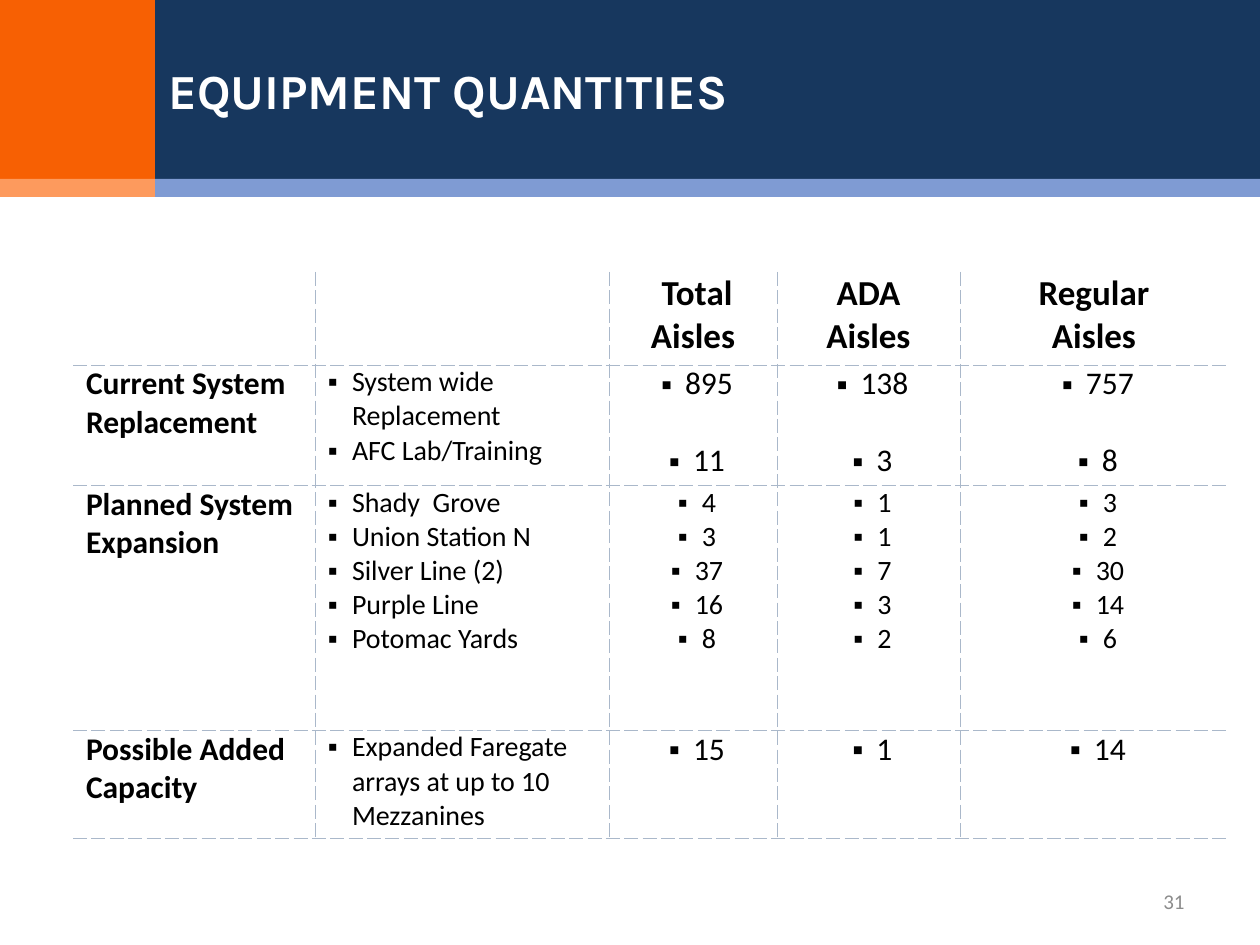
from lxml.etree import SubElement
from pptx import Presentation
from pptx.dml.color import RGBColor
from pptx.enum.shapes import MSO_SHAPE
from pptx.enum.text import MSO_ANCHOR, MSO_AUTO_SIZE, PP_ALIGN
from pptx.oxml import parse_xml
from pptx.oxml.ns import nsdecls, qn
from pptx.util import Emu, Pt

TITLE = "EQUIPMENT QUANTITIES"
PAGE_NUMBER = "31"
BANDS = [
    (155, 0, 1105, 180, "17375E"),
    (0, 0, 155, 180, "F76003"),
    (155, 179, 1105, 18, "7F9BD3"),
    (0, 179, 155, 18, "FD9A5D"),
]
HEADERS = [[], [], ["Total Aisles "], ["ADA ", "Aisles "], ["Regular ", "Aisles "]]
GROUPS = [
    ("Current System Replacement", 18, 22,
     [["System wide Replacement", "AFC Lab/Training"],
      ["895", "11"], ["138", "3"], ["757", "8"]]),
    ("Planned System Expansion", 16, 0,
     [["Shady  Grove", "Union Station N", "Silver Line (2)", "Purple Line", "Potomac Yards"],
      ["4", "3", "37", "16", "8"], ["1", "1", "7", "3", "2"], ["3", "2", "30", "14", "6"]]),
    ("Possible Added Capacity", 18, 0,
     [["Expanded Faregate arrays at up to 10 Mezzanines"], ["15"], ["1"], ["14"]]),
]
COLUMN_WIDTHS = [242, 294, 168, 183, 268]
ROW_HEIGHTS = [93, 120, 245, 107]
TABLE_LEFT, TABLE_TOP = 73, 272
RULE_COLOR = "AAB8CA"


def px(n):
    return Emu(round(n * 914400 / 126))


def color(code):
    return RGBColor.from_string(code)


def style(paragraph, size, code, bold=False, align=PP_ALIGN.LEFT, face="Calibri"):
    paragraph.alignment = align
    font = paragraph.font
    font.name, font.size, font.bold = face, Pt(size), bold
    font.color.rgb = color(code)


def add_bullet(paragraph):
    properties = paragraph._p.get_or_add_pPr()
    properties.set("marL", str(px(24)))
    properties.set("indent", str(-px(24)))
    SubElement(properties, qn("a:buFont")).set("typeface", "Wingdings")
    properties[-1].set("typeface", "Arial")
    SubElement(properties, qn("a:buChar")).set("char", "▪")


def write_cell(cell, lines, size, bold=False, align=PP_ALIGN.LEFT, bullets=False, gap=0):
    cell.margin_left, cell.margin_right = px(13), px(5)
    cell.margin_top, cell.margin_bottom = 0, px(5)
    cell.vertical_anchor = MSO_ANCHOR.TOP
    frame = cell.text_frame
    for i, line in enumerate(lines):
        paragraph = frame.add_paragraph() if i else frame.paragraphs[0]
        paragraph.text = line
        if i and gap:
            paragraph.space_before = Pt(gap)
        if bullets:
            add_bullet(paragraph)
        style(paragraph, size, "000000", bold, align)


def draw_rules(cell, sides):
    cell.fill.background()
    properties = cell._tc.get_or_add_tcPr()
    for i, (side, ruled) in enumerate(sides.items()):
        paint = (f'<a:solidFill><a:srgbClr val="{RULE_COLOR}"/></a:solidFill>'
                 '<a:prstDash val="dash"/>' if ruled else "<a:noFill/>")
        properties.insert(i, parse_xml(
            f'<a:ln{side} {nsdecls("a")} w="{Pt(0.5)}">{paint}</a:ln{side}>'))


def add_table(slide):
    rows, columns = len(ROW_HEIGHTS), len(COLUMN_WIDTHS)
    table = slide.shapes.add_table(
        rows, columns, px(TABLE_LEFT), px(TABLE_TOP),
        px(sum(COLUMN_WIDTHS)), px(sum(ROW_HEIGHTS))).table
    table.first_row = table.horz_banding = False
    for column, width in zip(table.columns, COLUMN_WIDTHS):
        column.width = px(width)
    for row, height in zip(table.rows, ROW_HEIGHTS):
        row.height = px(height)

    for c, lines in enumerate(HEADERS):
        write_cell(table.cell(0, c), lines, 20, True, PP_ALIGN.CENTER)
    for r, (group, count_size, count_gap, (items, *counts)) in enumerate(GROUPS, 1):
        write_cell(table.cell(r, 0), [group], 18, True)
        write_cell(table.cell(r, 1), items, 16, bullets=True)
        for c, numbers in enumerate(counts, 2):
            write_cell(table.cell(r, c), numbers, count_size, False,
                       PP_ALIGN.CENTER, True, count_gap)
    for r in range(rows):
        for c in range(columns):
            draw_rules(table.cell(r, c),
                       {"L": c > 0, "R": c < columns - 1, "T": r > 0, "B": True})


def main():
    deck = Presentation()
    deck.slide_width, deck.slide_height = px(1260), px(945)
    slide = deck.slides.add_slide(deck.slide_layouts[5])

    for left, top, width, height, code in BANDS:
        band = slide.shapes.add_shape(
            MSO_SHAPE.RECTANGLE, px(left), px(top), px(width), px(height))
        band.shadow.inherit = False
        band.fill.solid()
        band.fill.fore_color.rgb = color(code)
        band.line.fill.background()

    add_table(slide)

    number = slide.shapes.add_textbox(px(903), px(876), px(294), px(50)).text_frame
    number.word_wrap = True
    number.vertical_anchor = MSO_ANCHOR.MIDDLE
    number.text = PAGE_NUMBER
    style(number.paragraphs[0], 12, "8C8C8C", align=PP_ALIGN.RIGHT)

    title = slide.shapes.title
    title.left, title.top, title.width, title.height = px(156), 0, px(1104), px(179)
    title.text_frame.auto_size = MSO_AUTO_SIZE.NONE
    title.text_frame.vertical_anchor = MSO_ANCHOR.MIDDLE
    title.text_frame.text = TITLE
    style(title.text_frame.paragraphs[0], 28, "FFFFFF", True, face="Karla")
    slide.shapes._spTree.append(title._element)

    deck.save("out.pptx")


if __name__ == "__main__":
    main()
